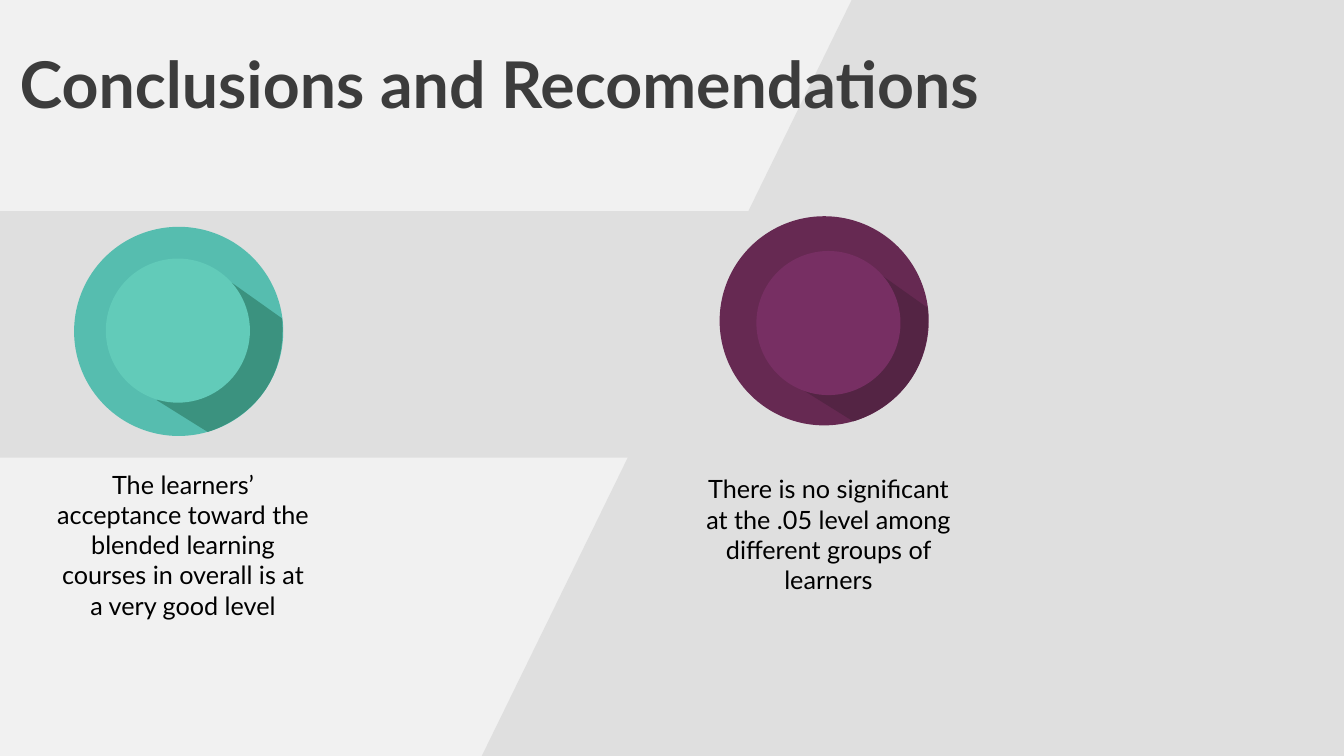
from pptx import Presentation
from pptx.dml.color import RGBColor
from pptx.enum.shapes import MSO_SHAPE
from pptx.enum.text import MSO_ANCHOR, MSO_AUTO_SIZE, PP_ALIGN
from pptx.util import Pt

PX = 9144  # EMU per px, 100 px to the inch
WIDTH, HEIGHT = 2667, 1500
TITLE_ONLY = 5
RECT, OVAL = MSO_SHAPE.RECTANGLE, MSO_SHAPE.OVAL
MIDDLE, NO_FIT = MSO_ANCHOR.MIDDLE, MSO_AUTO_SIZE.NONE
LEFT, CENTER = PP_ALIGN.LEFT, PP_ALIGN.CENTER

COLORS = {
    "background": "F1F1F1", "panel": "DFDFDF", "title": "3C3C3C", "text": "000000",
    "teal_ring": "56BDAF", "teal_shade": "3B927F", "teal_disc": "62CBB9",
    "plum_ring": "662952", "plum_shade": "542444", "plum_disc": "772F63",
}

RING, DISC = 415, 286
# Cast shadow, relative to the ring's top left corner
SHADE_START, SHADE_END = [(164, 344)], [(313, 111)]
SHADE_CURVE = [(265, 407), (265, 407), (427, 365), (413, 182)]

# name, ring corner, disc corner, text box, text
CONCLUSIONS = [
    ("teal", (147, 450), (210, 513), (107, 929, 512, 303),
     "The learners’ acceptance toward the blended learning courses in overall is at "
     "a very good level"),
    ("plum", (1428, 429), (1501, 498), (1388, 939, 512, 242),
     "There is no significant at the .05 level among different groups of learners"),
]


def color(name):
    return RGBColor.from_string(COLORS[name])


def bezier(points, steps=24):
    """Sample a cubic curve given by its four control points."""
    samples = []
    for i in range(steps + 1):
        t = i / steps
        weights = ((1 - t) ** 3, 3 * t * (1 - t) ** 2, 3 * t * t * (1 - t), t ** 3)
        samples.append(tuple(sum(w * p[axis] for w, p in zip(weights, points))
                             for axis in (0, 1)))
    return samples


class Deck:
    """Slide style, with the slide and the shape collection being drawn into."""

    font = "Lato"

    def __init__(self):
        self.prs = Presentation()
        self.prs.slide_width, self.prs.slide_height = WIDTH * PX, HEIGHT * PX
        self.s = self.prs.slides.add_slide(self.prs.slide_layouts[TITLE_ONLY])
        self.shapes = self.s.shapes
        fill = self.s.background.fill
        fill.solid()
        fill.fore_color.rgb = color("background")

    def paint(self, sp, fill):
        sp.shadow.inherit = False
        sp.fill.solid()
        sp.fill.fore_color.rgb = color(fill)
        sp.line.fill.background()
        return sp

    def shape(self, kind, x, y, w, h, fill):
        return self.paint(self.shapes.add_shape(kind, x * PX, y * PX, w * PX, h * PX), fill)

    def polygon(self, points, fill):
        start, *rest = [(round(x * PX), round(y * PX)) for x, y in points]
        builder = self.shapes.build_freeform(*start)
        builder.add_line_segments(rest, close=True)
        return self.paint(builder.convert_to_shape(), fill)

    def set_text(self, sp, text, size, fill, align, bold=False):
        tf = sp.text_frame
        tf.margin_left = tf.margin_right = tf.margin_top = tf.margin_bottom = 0
        tf.word_wrap, tf.auto_size, tf.vertical_anchor = True, NO_FIT, MIDDLE
        p = tf.paragraphs[0]
        p.text, p.alignment = text, align
        p.font.name, p.font.size, p.font.bold = self.font, Pt(size), bold
        p.font.color.rgb = color(fill)

    def title(self, x, y, w, h, text):
        sp = self.s.shapes.title
        sp.left, sp.top, sp.width, sp.height = x * PX, y * PX, w * PX, h * PX
        self.set_text(sp, text, 92, "title", LEFT, bold=True)

    def text(self, x, y, w, h, text):
        sp = self.shapes.add_textbox(x * PX, y * PX, w * PX, h * PX)
        self.set_text(sp, text, 36, "text", CENTER)

    def send_to_back(self, sp):
        self.s.shapes._spTree.insert(2, sp._element)

    def conclusion(self, name, ring, disc, box, text):
        """Group a text with the round badge above it."""
        self.shapes = self.s.shapes.add_group_shape().shapes
        self.text(*box, text)
        self.shape(OVAL, *ring, RING, RING, f"{name}_ring")
        shade = SHADE_START + bezier(SHADE_CURVE) + SHADE_END
        self.polygon([(ring[0] + x, ring[1] + y) for x, y in shade], f"{name}_shade")
        self.shape(OVAL, *disc, DISC, DISC, f"{name}_disc")
        self.shapes = self.s.shapes


def main():
    deck = Deck()
    panel = deck.polygon([(1690, 0), (WIDTH, 0), (WIDTH, HEIGHT), (956, HEIGHT)], "panel")
    deck.send_to_back(panel)
    deck.title(39, 72, 1908, 184, "Conclusions and Recomendations")
    deck.shape(RECT, 0, 419, 2665, 489, "panel")
    for item in CONCLUSIONS:
        deck.conclusion(*item)
    deck.prs.save("out.pptx")


if __name__ == "__main__":
    main()
